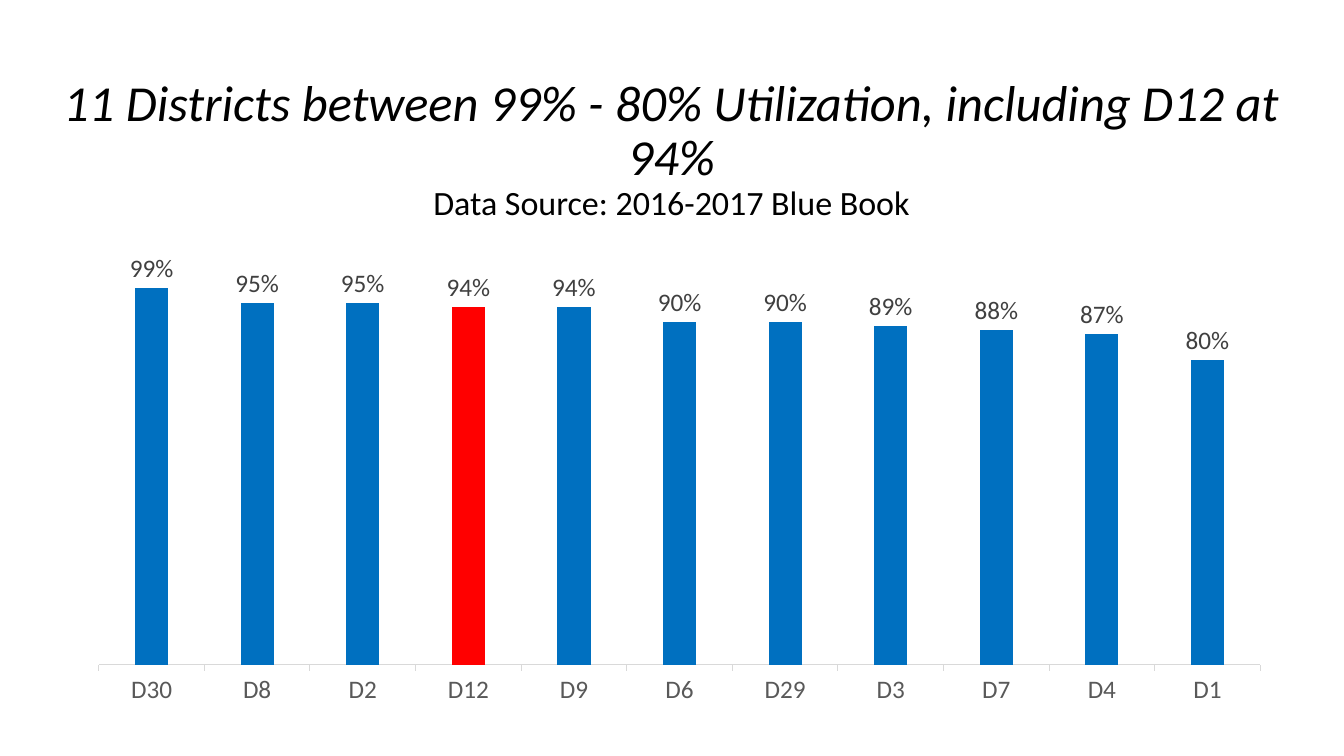
from typing import NamedTuple

from pptx import Presentation
from pptx.chart.data import CategoryChartData
from pptx.dml.color import RGBColor
from pptx.enum.chart import XL_CHART_TYPE, XL_LABEL_POSITION, XL_TICK_LABEL_POSITION, XL_TICK_MARK
from pptx.enum.text import MSO_ANCHOR, MSO_AUTO_SIZE, PP_ALIGN
from pptx.util import Inches, Pt

WIDTH, HEIGHT = 13.33, 7.5
FONT = "Calibri"
COLORS = {
    "title": "000000",
    "bar": "0070C0",
    "highlight": "FF0000",
    "axis_text": "595959",
    "axis_line": "D9D9D9",
    "label": "404040",
}


class Area(NamedTuple):
    """Left, top, width and height as inches over the slide's size."""
    left: float
    top: float
    width: float
    height: float


class TitleLine(NamedTuple):
    text: str
    size: float
    italic: bool


class District(NamedTuple):
    name: str
    utilization: float
    highlight: bool = False


TITLE_AREA = Area(0.1 / WIDTH, 0.51 / HEIGHT, 13.12 / WIDTH, 1.45 / HEIGHT)
CHART_AREA = Area(0.74 / WIDTH, 1.96 / HEIGHT, 12 / WIDTH, 5.14 / HEIGHT)

TITLE_LINES = [
    TitleLine("11 Districts between 99% - 80% Utilization, including D12 at 94%", 36, True),
    TitleLine("Data Source: 2016-2017 Blue Book", 24.3, False),
]
DISTRICTS = [
    District("D30", 0.99),
    District("D8", 0.95),
    District("D2", 0.95),
    District("D12", 0.94, highlight=True),
    District("D9", 0.94),
    District("D6", 0.9),
    District("D29", 0.9),
    District("D3", 0.89),
    District("D7", 0.88),
    District("D4", 0.87),
    District("D1", 0.8),
]


def color(name: str) -> RGBColor:
    return RGBColor.from_string(COLORS[name])


def place(area: Area) -> tuple:
    return (Inches(area.left * WIDTH), Inches(area.top * HEIGHT),
            Inches(area.width * WIDTH), Inches(area.height * HEIGHT))


def style_font(font, size: float, color_name: str) -> None:
    font.name = FONT
    font.size = Pt(size)
    font.color.rgb = color(color_name)


def fill_title(sp, lines: list[TitleLine]) -> None:
    sp.left, sp.top, sp.width, sp.height = place(TITLE_AREA)
    tf = sp.text_frame
    tf.word_wrap = True
    tf.auto_size = MSO_AUTO_SIZE.NONE
    tf.vertical_anchor = MSO_ANCHOR.TOP
    tf.margin_top = Inches(0.26)
    for i, line in enumerate(lines):
        p = tf.paragraphs[0] if i == 0 else tf.add_paragraph()
        p.text = line.text
        p.alignment = PP_ALIGN.CENTER
        p.line_spacing = 0.9
        style_font(p.font, line.size, "title")
        p.font.italic = line.italic


def add_utilization_chart(s, districts: list[District]) -> None:
    data = CategoryChartData(number_format="0%")
    data.categories = [d.name for d in districts]
    data.add_series("Series 1", [d.utilization for d in districts])
    chart = s.shapes.add_chart(XL_CHART_TYPE.COLUMN_CLUSTERED, *place(CHART_AREA), data).chart
    chart.has_title = False
    chart.has_legend = False
    style_font(chart.font, 10, "title")

    # Axes
    axis = chart.category_axis
    axis.major_tick_mark = XL_TICK_MARK.OUTSIDE
    axis.tick_label_position = XL_TICK_LABEL_POSITION.LOW
    axis.format.line.color.rgb = color("axis_line")
    axis.format.line.width = Pt(0.75)
    style_font(axis.tick_labels.font, 18, "axis_text")
    scale = chart.value_axis
    scale.minimum_scale, scale.maximum_scale = 0, 1.2
    scale.has_major_gridlines = False
    scale.tick_labels.number_format = "0%"
    scale.tick_labels.number_format_is_linked = False
    scale.visible = False

    # Bars
    plot = chart.plots[0]
    plot.gap_width, plot.overlap = 219, -27
    plot.vary_by_categories = False
    series = plot.series[0]
    series.format.fill.solid()
    series.format.fill.fore_color.rgb = color("bar")
    for i, district in enumerate(districts):
        if district.highlight:
            fill = series.points[i].format.fill
            fill.solid()
            fill.fore_color.rgb = color("highlight")

    # Value labels
    labels = series.data_labels
    labels.show_value = True
    labels.position = XL_LABEL_POSITION.OUTSIDE_END
    labels.number_format = "0%"
    labels.number_format_is_linked = False
    style_font(labels.font, 18, "label")


def main() -> None:
    prs = Presentation()
    prs.slide_width, prs.slide_height = Inches(WIDTH), Inches(HEIGHT)
    title_only = prs.slide_layouts[5]
    s = prs.slides.add_slide(title_only)
    fill_title(s.shapes.title, TITLE_LINES)
    add_utilization_chart(s, DISTRICTS)
    prs.save("out.pptx")


if __name__ == "__main__":
    main()
